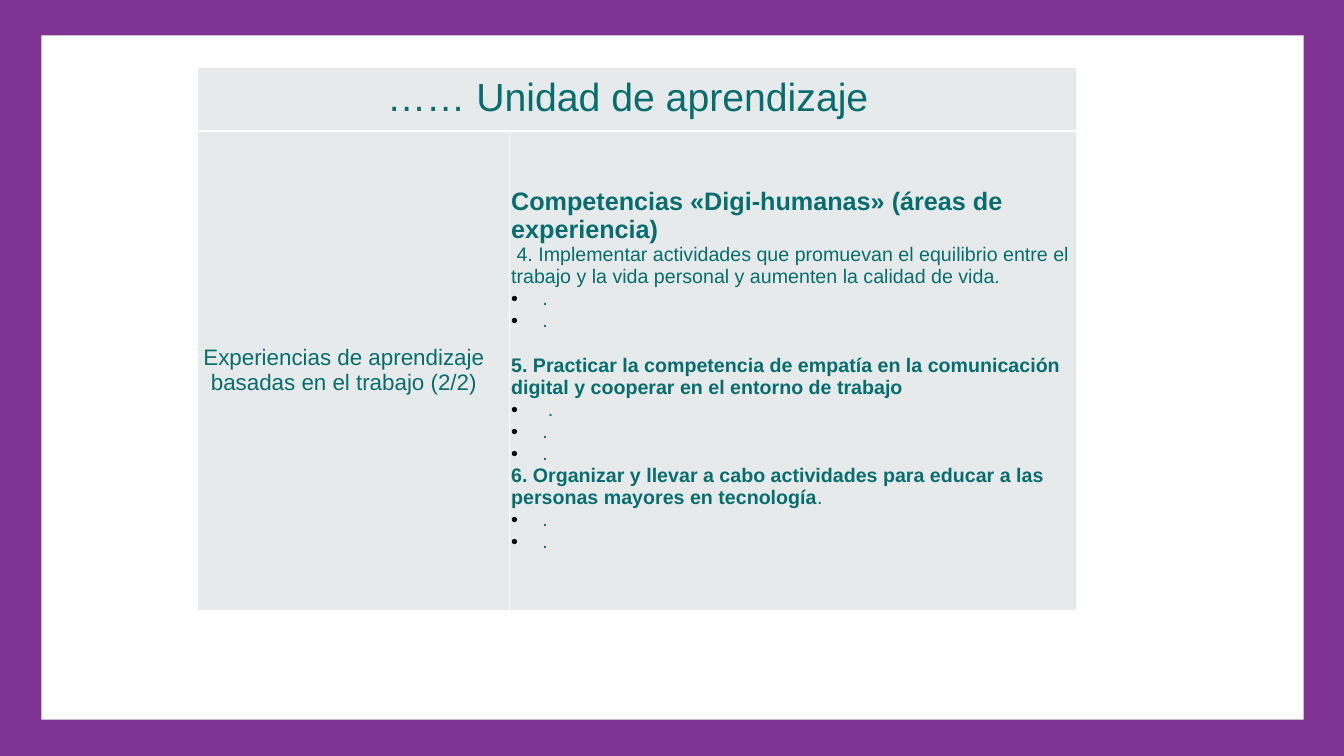
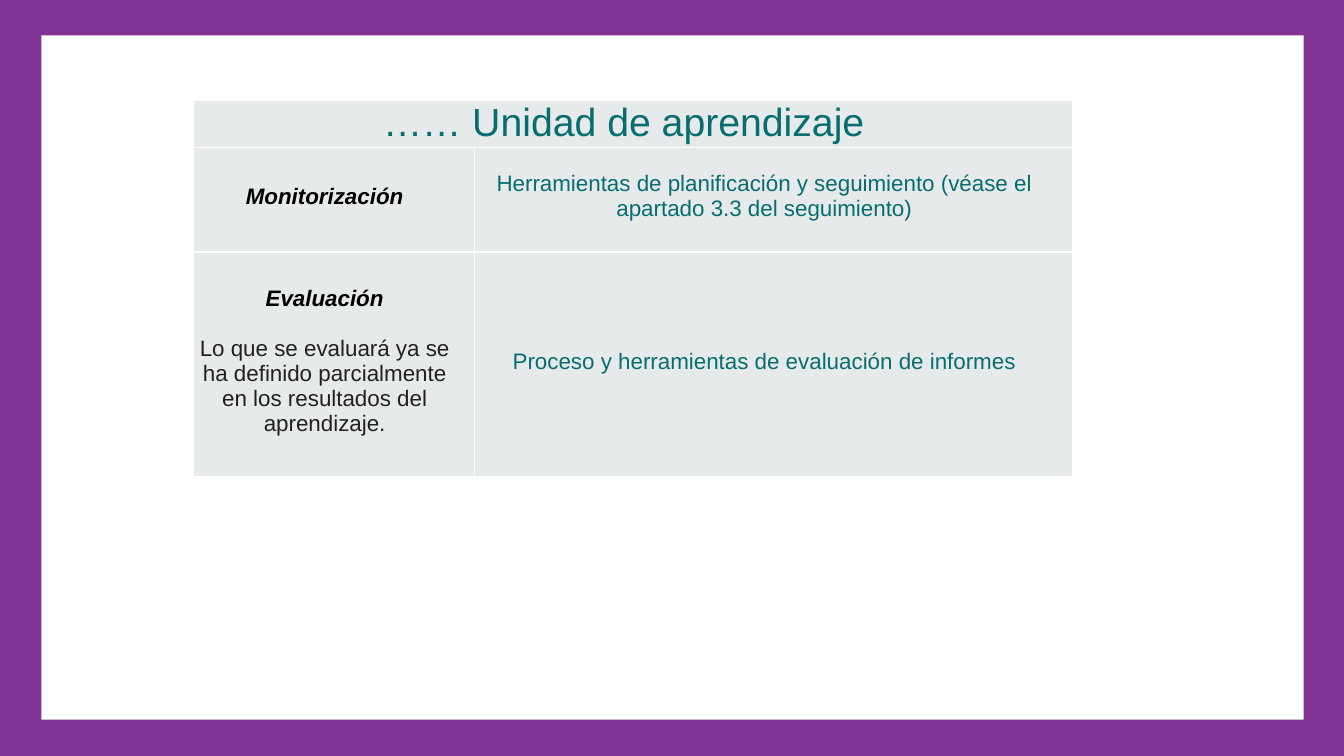
from lxml.etree import SubElement
from pptx import Presentation
from pptx.dml.color import RGBColor
from pptx.enum.shapes import MSO_SHAPE
from pptx.enum.text import MSO_ANCHOR, PP_ALIGN
from pptx.oxml.ns import qn
from pptx.util import Pt

SCALE = 9144
PURPLE, WHITE, BLACK = "7F3494", "FFFFFF", "000000"
TEAL, GREY, DARK = "086D6E", "E6EAEA", "212121"
WIDE, HIGH = 1333, 750
SHIFT = 19
TIGHT = (2, 0, 2, 2)
LOOSE = (6, 1, 6, 7)

STYLES = {
    "title": (TEAL, {"size": Pt(28), "bold": False}),
    "body": (TEAL, {"size": Pt(16), "bold": False}),
    "label": (BLACK, {"size": Pt(16), "bold": True, "italic": True}),
    "note": (DARK, {"size": Pt(16), "bold": False}),
    "head": (TEAL, {"size": Pt(18), "bold": True}),
    "strong": (TEAL, {"size": Pt(14), "bold": True}),
    "small": (TEAL, {"size": Pt(14), "bold": False}),
}


def px(size):
    return int(size * SCALE)


def color(value):
    return RGBColor.from_string(value)


def para(*runs, gap=0, bullet=False):
    return {"runs": runs, "gap": gap, "bullet": bullet}


def one(text, style, gap=0):
    return para((text, style), gap=gap)


def dot(text="."):
    return para((text, "small"), bullet=True)


def add_rect(slide, box, fill):
    rect = slide.shapes.add_shape(MSO_SHAPE.RECTANGLE, *map(px, box))
    rect.shadow.inherit = False
    rect.fill.solid()
    rect.fill.fore_color.rgb = color(fill)
    rect.line.fill.background()


def add_page(deck):
    slide = deck.slides.add_slide(deck.slide_layouts[6])
    add_rect(slide, (0, 0, WIDE, HIGH), PURPLE)
    add_rect(slide, (41, 35, 1252, 679), WHITE)
    return slide


def add_bullet(line):
    props = line._p.get_or_add_pPr()
    props.set("marL", str(px(31)))
    props.set("indent", str(-px(31)))
    tint = SubElement(props, qn("a:buClr"))
    SubElement(tint, qn("a:srgbClr"), val=BLACK)
    SubElement(props, qn("a:buFont"), typeface="Arial")
    SubElement(props, qn("a:buChar"), char="•")


def add_edges(cell):
    props = cell._tc.get_or_add_tcPr()
    for side in ("lnL", "lnR", "lnT", "lnB"):
        edge = SubElement(props, qn(f"a:{side}"), w=str(Pt(1)))
        paint = SubElement(edge, qn("a:solidFill"))
        SubElement(paint, qn("a:srgbClr"), val=WHITE)


def fill_cell(cell, paras, inset, center):
    add_edges(cell)
    cell.fill.solid()
    cell.fill.fore_color.rgb = color(GREY)
    left, top, right, base = inset
    right += SHIFT if center else 0
    format = {
        "vertical_anchor": MSO_ANCHOR.MIDDLE,
        "margin_left": px(left),
        "margin_top": px(top),
        "margin_right": px(right),
        "margin_bottom": px(base),
    }
    for key, value in format.items():
        setattr(cell, key, value)
    frame = cell.text_frame
    for index, item in enumerate(paras):
        line = frame.add_paragraph() if index else frame.paragraphs[0]
        line.alignment = PP_ALIGN.CENTER if center else PP_ALIGN.LEFT
        if item["gap"]:
            line.space_before = Pt(item["gap"])
        if item["bullet"]:
            add_bullet(line)
        for text, style in item["runs"]:
            run = line.add_run()
            run.text = text
            tint, values = STYLES[style]
            run.font.name = "Arial"
            run.font.color.rgb = color(tint)
            for key, value in values.items():
                setattr(run.font, key, value)


def add_unit(slide, left, top, cols, rows, body, inset, lists=False):
    box = (left, top, sum(cols), sum(rows))
    table = slide.shapes.add_table(len(rows), len(cols), *map(px, box)).table
    table.first_row = table.horz_banding = False
    for col, width in zip(table.columns, cols):
        col.width = px(width)
    for row, height in zip(table.rows, rows):
        row.height = px(height)
    table.cell(0, 0).merge(table.cell(0, 1))
    title = [one("…… Unidad de aprendizaje", "title")]
    fill_cell(table.cell(0, 0), title, TIGHT, True)
    for y, cells in enumerate(body, 1):
        for x, paras in enumerate(cells):
            fill_cell(table.cell(y, x), paras, inset, not (lists and x))


def add_skills(deck):
    label = [one("Experiencias de aprendizaje basadas en el trabajo (2/2)", "body")]
    skills = [
        one("Competencias «Digi-humanas» (áreas de experiencia)", "head"),
        one(" 4. Implementar actividades que promuevan el equilibrio entre el "
            "trabajo y la vida personal y aumenten la calidad de vida.", "small"),
        dot(), dot(),
        one("5. Practicar la competencia de empatía en la comunicación digital "
            "y cooperar en el entorno de trabajo", "strong", gap=16),
        dot(" ."), dot(), dot(),
        para(("6. Organizar y llevar a cabo actividades para educar a las "
              "personas mayores en tecnología", "strong"), (".", "small")),
        dot(), dot(),
    ]
    add_unit(add_page(deck), 196, 67, (309, 563), (63, 476),
             [(label, skills)], TIGHT, lists=True)


def add_checks(deck):
    body = [
        ([one("Monitorización", "label")],
         [one("Herramientas de planificación y seguimiento (véase el "
              "apartado 3.3 del seguimiento)", "body")]),
        ([one("Evaluación", "label"),
          one("Lo que se evaluará ya se ha definido parcialmente en los "
              "resultados del aprendizaje.", "note", gap=18)],
         [one("Proceso y herramientas de evaluación de informes", "body")]),
    ]
    add_unit(add_page(deck), 192, 100, (279, 593), (46, 104, 223), body, LOOSE)


def main():
    deck = Presentation()
    deck.slide_width, deck.slide_height = px(WIDE), px(HIGH)
    add_skills(deck)
    add_checks(deck)
    deck.save("out.pptx")


if __name__ == "__main__":
    main()
